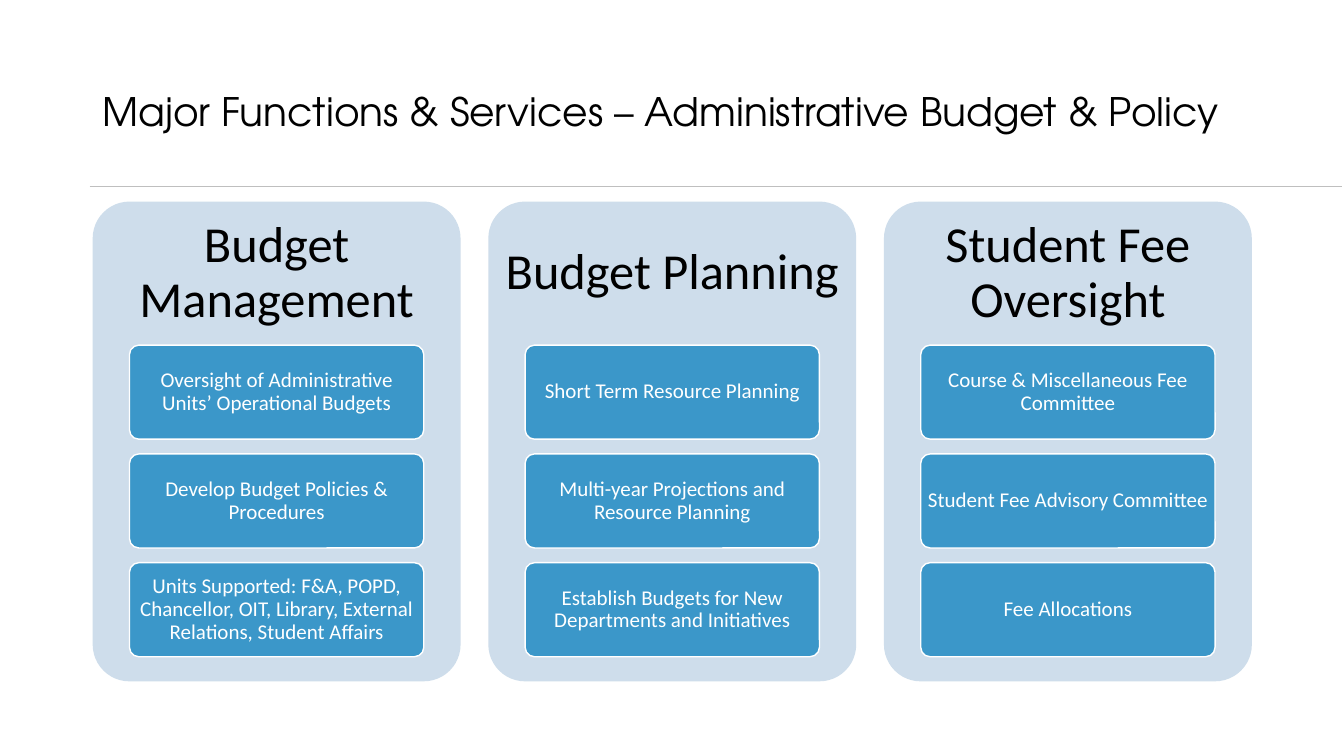
from lxml.etree import SubElement
from pptx import Presentation
from pptx.dml.color import RGBColor
from pptx.enum.shapes import MSO_CONNECTOR, MSO_SHAPE
from pptx.enum.text import MSO_ANCHOR, MSO_AUTO_SIZE, PP_ALIGN
from pptx.oxml.ns import qn
from pptx.util import Pt

BLACK = RGBColor(0x00, 0x00, 0x00)
WHITE = RGBColor(0xFF, 0xFF, 0xFF)
GREY = RGBColor(0xBF, 0xBF, 0xBF)
PALE = RGBColor(0xCE, 0xDD, 0xEB)
BLUE = RGBColor(0x3B, 0x97, 0xC9)

TITLE = "Major Functions & Services – Administrative Budget & Policy"
GROUPS = [
    ("Budget Management", [
        "Oversight of Administrative Units’ Operational Budgets",
        "Develop Budget Policies & Procedures",
        "Units Supported: F&A, POPD, Chancellor, OIT, Library, "
        "External Relations, Student Affairs",
    ]),
    ("Budget Planning", [
        "Short Term Resource Planning",
        "Multi-year Projections and Resource Planning",
        "Establish Budgets for New Departments and Initiatives",
    ]),
    ("Student Fee Oversight", [
        "Course & Miscellaneous Fee Committee",
        "Student Fee Advisory Committee",
        "Fee Allocations",
    ]),
]

# Lengths in points
LEFT, TOP, WIDTH, HEIGHT = 66.2, 144, 262.8, 342.7
STEP = 282.6
HEAD = 102.8
INDENT = WIDTH / 10
CARD_TOP, CARD_HIGH, CARD_STEP = 246.5, 67.2, 77.7


def write(shape, text, font, size, color, align, pad):
    frame = shape.text_frame
    frame.word_wrap = True
    frame.auto_size = MSO_AUTO_SIZE.NONE
    frame.vertical_anchor = MSO_ANCHOR.MIDDLE
    frame.margin_left = frame.margin_right = Pt(pad[0])
    frame.margin_top = frame.margin_bottom = Pt(pad[1])
    para = frame.paragraphs[0]
    para.alignment = align
    para.line_spacing = 0.9
    para.space_before = Pt(0)
    run = para.add_run()
    run.text = text
    run.font.name = font
    run.font.size = Pt(size)
    run.font.color.rgb = color


def add_title(slide):
    title = slide.shapes.title
    title.left, title.top = Pt(66), Pt(28.8)
    title.width, title.height = Pt(838.8), Pt(104.4)
    write(title, TITLE, "TeX Gyre Adventor", 28, BLACK, PP_ALIGN.LEFT, (7.2, 3.6))


def add_rule(slide):
    rule = slide.shapes.add_connector(
        MSO_CONNECTOR.STRAIGHT, Pt(64), Pt(133.2), Pt(958.5), Pt(133.2))
    rule.line.color.rgb = GREY
    rule.line.width = Pt(0.5)
    SubElement(rule._element.spPr, qn("a:effectLst"))


def add_box(slide, left, top, width, height, fill):
    box = slide.shapes.add_shape(
        MSO_SHAPE.ROUNDED_RECTANGLE, Pt(left), Pt(top), Pt(width), Pt(height))
    box.adjustments[0] = 0.1
    box.shadow.inherit = False
    box.fill.solid()
    box.fill.fore_color.rgb = fill
    box.line.fill.background()
    return box


def add_card(slide, left, top, text):
    card = add_box(slide, left, top, WIDTH - 2 * INDENT, CARD_HIGH, BLUE)
    card.line.color.rgb = WHITE
    card.line.width = Pt(1)
    write(card, text, "Calibri", 15, WHITE, PP_ALIGN.CENTER, (3, 2.25))


def add_group(slide, left, name, items):
    """Draw a panel with its heading and its column of cards."""
    add_box(slide, left, TOP, WIDTH, HEIGHT, PALE)
    head = slide.shapes.add_textbox(Pt(left), Pt(TOP), Pt(WIDTH), Pt(HEAD))
    write(head, name, "Calibri", 36, BLACK, PP_ALIGN.CENTER, (10.8, 10.8))
    for row, text in enumerate(items):
        add_card(slide, left + INDENT, CARD_TOP + row * CARD_STEP, text)


def main():
    deck = Presentation()
    deck.slide_width, deck.slide_height = Pt(960), Pt(540)
    slide = deck.slides.add_slide(deck.slide_layouts[5])
    add_rule(slide)
    add_title(slide)
    for col, (name, items) in enumerate(GROUPS):
        add_group(slide, LEFT + col * STEP, name, items)
    deck.save("out.pptx")


if __name__ == "__main__":
    main()
